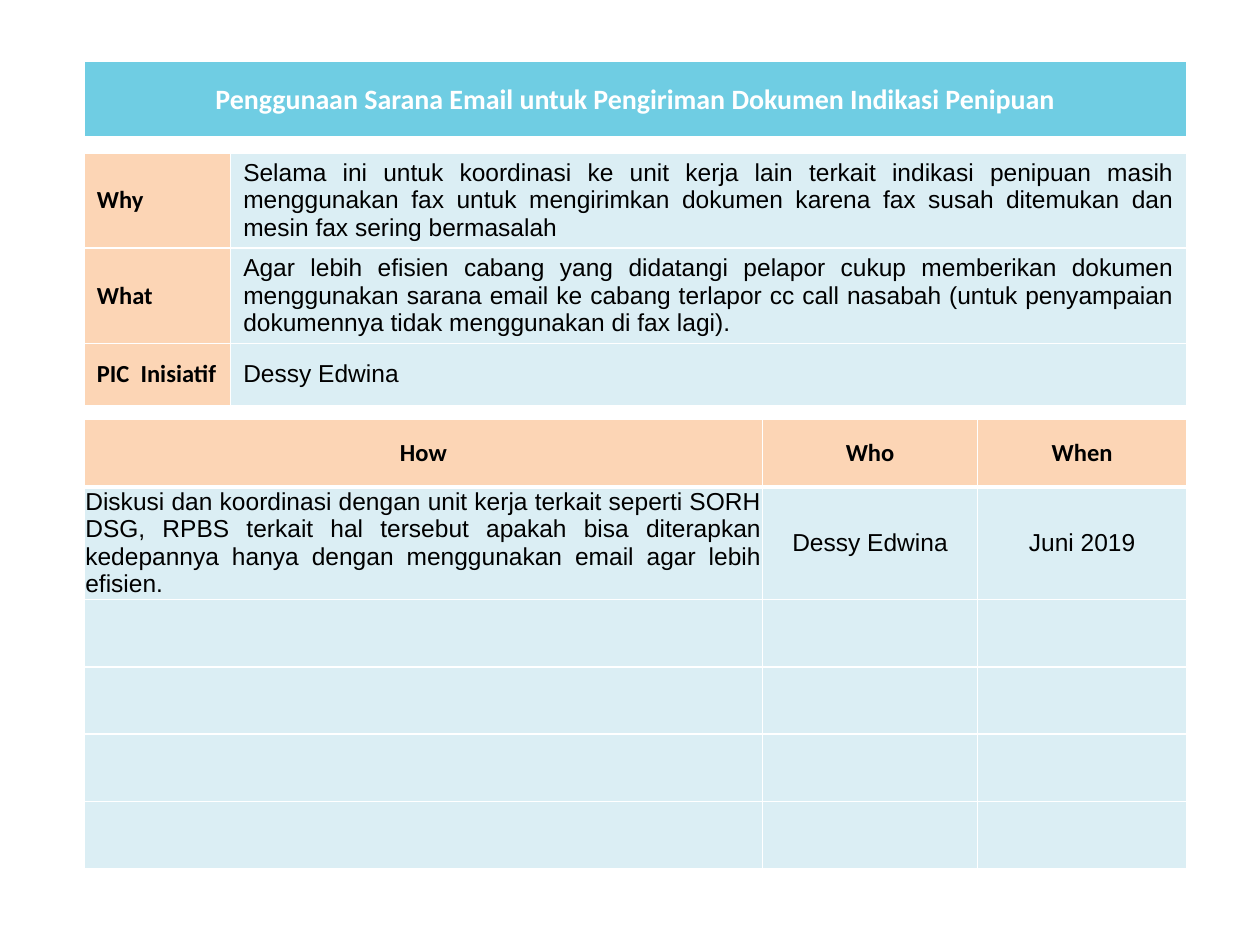
from dataclasses import dataclass

from lxml import etree
from pptx import Presentation
from pptx import util as u
from pptx.dml import color
from pptx.enum import text
from pptx.oxml import ns


@dataclass(frozen=True)
class Theme:
    """Hold the colours, fonts and type sizes of the slide."""
    banner: str = "6FCDE3"
    label: str = "FCD5B5"
    body: str = "DBEEF4"
    white: str = "FFFFFF"
    black: str = "000000"
    heading_font: str = "Calibri"
    body_font: str = "Arial"
    title_size: int = 16
    text_size: int = 14
    gap_size: int = 1
    thin: int = 1
    thick: int = 3


THEME = Theme()
LEFT = 1.7
ALIGN = text.PP_ALIGN
BODY = dict(fill=THEME.body, ink=THEME.black, name=THEME.body_font,
            size=THEME.text_size, bold=False, align=ALIGN.LEFT)
JUSTIFIED = BODY | dict(align=ALIGN.JUSTIFY)
CENTRED = BODY | dict(align=ALIGN.CENTER)
LABEL = BODY | dict(fill=THEME.label, name=THEME.heading_font, bold=True)
HEADER = LABEL | dict(align=ALIGN.CENTER, bottom=THEME.thick)
BANNER = HEADER | dict(fill=THEME.banner, ink=THEME.white, size=THEME.title_size)
GAP = BODY | dict(fill=THEME.white, size=THEME.gap_size, inset=0)
STEP = JUSTIFIED | dict(inset=0.02, anchor=text.MSO_ANCHOR.TOP)

INITIATIVE = [
    [("Penggunaan Sarana Email untuk Pengiriman Dokumen Indikasi Penipuan", BANNER),
     ("", BANNER)],
    [("", GAP)] * 2,
    [("Why", LABEL),
     ("Selama ini untuk koordinasi ke unit kerja lain terkait indikasi penipuan masih "
      "menggunakan fax untuk mengirimkan dokumen karena fax susah ditemukan dan "
      "mesin fax sering bermasalah", JUSTIFIED)],
    [("What", LABEL),
     ("Agar lebih efisien cabang yang didatangi pelapor cukup memberikan dokumen "
      "menggunakan sarana email ke cabang terlapor cc call nasabah (untuk penyampaian "
      "dokumennya tidak menggunakan di fax lagi).", JUSTIFIED)],
    [("PIC  Inisiatif", LABEL), ("Dessy Edwina", BODY)],
]
ACTION_PLAN = [
    [(heading, HEADER) for heading in ("How", "Who", "When")],
    [("Diskusi dan koordinasi dengan unit kerja terkait seperti SORH DSG, RPBS terkait "
      "hal tersebut apakah bisa diterapkan kedepannya hanya dengan menggunakan email "
      "agar lebih efisien.", STEP),
     ("Dessy Edwina", CENTRED), ("Juni 2019", CENTRED)],
] + [[("", BODY)] * 3] * 4


def draw_borders(cell, bottom):
    """Give a cell white edges, with its own width at the bottom."""
    properties = cell._tc.get_or_add_tcPr()
    widths = dict(lnL=THEME.thin, lnR=THEME.thin, lnT=THEME.thin, lnB=bottom)
    for position, (edge, width) in enumerate(widths.items()):
        line = etree.Element(ns.qn(f"a:{edge}"), w=str(u.Pt(width)))
        ink = etree.SubElement(line, ns.qn("a:solidFill"))
        etree.SubElement(ink, ns.qn("a:srgbClr"), val=THEME.white)
        properties.insert(position, line)


def write_cell(cell, wording, look):
    """Fill one cell with its wording and look."""
    cell.fill.solid()
    cell.fill.fore_color.rgb = color.RGBColor.from_string(look["fill"])
    cell.vertical_anchor = look.get("anchor", text.MSO_ANCHOR.MIDDLE)
    if "inset" in look:
        for side in ("left", "right", "top", "bottom"):
            setattr(cell, f"margin_{side}", u.Cm(look["inset"]))
    paragraph = cell.text_frame.paragraphs[0]
    paragraph.alignment = look["align"]
    if wording:
        run = paragraph.add_run()
        run.text = wording
        values = dict(name=look["name"], size=u.Pt(look["size"]), bold=look["bold"])
        for attribute, value in values.items():
            setattr(run.font, attribute, value)
        run.font.color.rgb = color.RGBColor.from_string(look["ink"])
    else:
        paragraph._p.get_or_add_endParaRPr().set("sz", str(look["size"] * 100))
    draw_borders(cell, look.get("bottom", THEME.thin))


def add_grid(slide, top, widths, heights, content):
    """Add a table of the given column widths and row heights in cm."""
    frame = slide.shapes.add_table(len(heights), len(widths), u.Cm(LEFT), u.Cm(top),
                                   u.Cm(sum(widths)), u.Cm(sum(heights)))
    grid = frame.table
    grid.first_row = grid.horz_banding = False
    for column, width in zip(grid.columns, widths):
        column.width = u.Cm(width)
    for row, height, entries in zip(grid.rows, heights, content):
        row.height = u.Cm(height)
        for cell, (wording, look) in zip(row.cells, entries):
            write_cell(cell, wording, look)
    return grid


def main():
    """Build the initiative slide and save it."""
    deck = Presentation()
    deck.slide_width, deck.slide_height = u.Cm(25.4), u.Cm(19.05)
    slide = deck.slides.add_slide(deck.slide_layouts.get_by_name("Blank"))
    initiative = add_grid(slide, 1.24, [2.95, 19.27],
                          [1.55, 0.29, 1.92, 1.92, 1.25], INITIATIVE)
    initiative.cell(0, 0).merge(initiative.cell(0, 1))
    add_grid(slide, 8.46, [13.67, 4.34, 4.21], [1.36, 2.24] + [1.36] * 4, ACTION_PLAN)
    deck.save("out.pptx")


if __name__ == "__main__":
    main()
